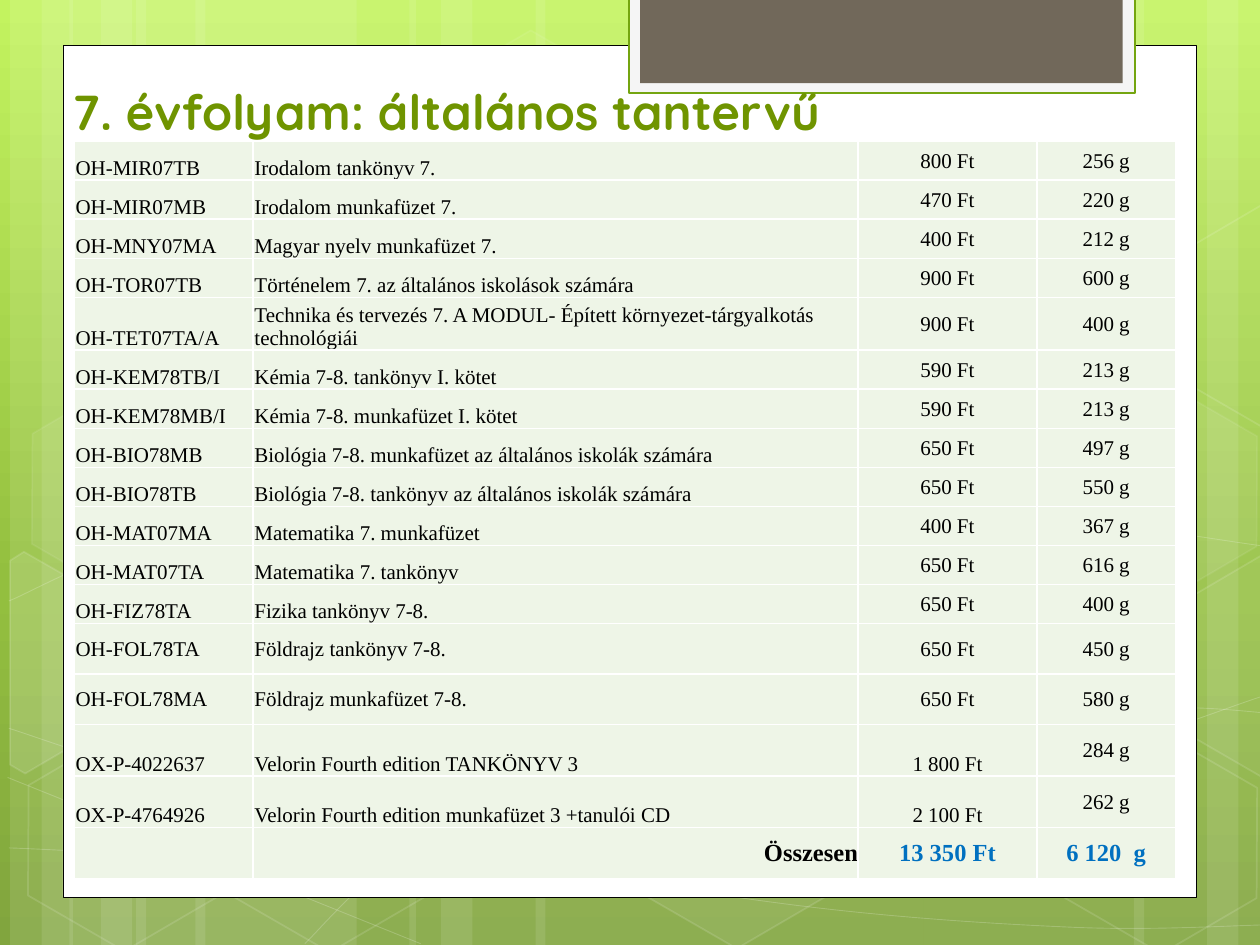
"""Build the textbook price and weight slide for grade 7."""
from copy import deepcopy

from lxml.etree import Element, SubElement
from pptx import Presentation
from pptx.dml.color import RGBColor
from pptx.enum.shapes import MSO_SHAPE
from pptx.enum.text import MSO_ANCHOR, PP_ALIGN
from pptx.oxml.ns import qn
from pptx.util import Inches, Pt

THEME = {
    "title": "6F9400", "text": "000000", "total": "0070C0", "cell": "EEF5E7",
    "white": "FFFFFF", "frame": "F5F5F5", "edge": "74A510", "tab": "71685A",
    "sky": [(0, "C3F35F"), (0.62, "93BF3F"), (1, "81A53E")],
    "head": "Quicksand", "body": "Times New Roman",
    "big": 28, "sum": 14, "small": 12,
}
TITLE = "7. évfolyam: általános tantervű"
BOOKS = [
    ("OH-MIR07TB", "Irodalom tankönyv 7.", "800 Ft", "256 g"),
    ("OH-MIR07MB", "Irodalom munkafüzet 7.", "470 Ft", "220 g"),
    ("OH-MNY07MA", "Magyar nyelv munkafüzet 7.", "400 Ft", "212 g"),
    ("OH-TOR07TB", "Történelem 7. az általános iskolások számára", "900 Ft", "600 g"),
    ("OH-TET07TA/A", "Technika és tervezés 7. A MODUL- Épített környezet-tárgyalkotás technológiái",
     "900 Ft", "400 g"),
    ("OH-KEM78TB/I", "Kémia 7-8. tankönyv I. kötet", "590 Ft", "213 g"),
    ("OH-KEM78MB/I", "Kémia 7-8. munkafüzet I. kötet", "590 Ft", "213 g"),
    ("OH-BIO78MB", "Biológia 7-8. munkafüzet az általános iskolák számára", "650 Ft", "497 g"),
    ("OH-BIO78TB", "Biológia 7-8. tankönyv az általános iskolák számára", "650 Ft", "550 g"),
    ("OH-MAT07MA", "Matematika 7. munkafüzet", "400 Ft", "367 g"),
    ("OH-MAT07TA", "Matematika 7. tankönyv", "650 Ft", "616 g"),
    ("OH-FIZ78TA", "Fizika tankönyv 7-8.", "650 Ft", "400 g"),
    ("OH-FOL78TA", "Földrajz tankönyv 7-8.", "650 Ft", "450 g"),
    ("OH-FOL78MA", "Földrajz munkafüzet 7-8.", "650 Ft", "580 g"),
    ("OX-P-4022637", "Velorin Fourth edition TANKÖNYV 3", "1 800 Ft", "284 g"),
    ("OX-P-4764926", "Velorin Fourth edition munkafüzet 3 +tanulói CD", "2 100 Ft", "262 g"),
    ("", "Összesen", "13 350 Ft", "6 120  g"),
]
COLS = [1.42, 4.8, 1.42, 1.1]
ROWS = [0.31] * 4 + [0.42] + [0.31] * 7 + [0.4] * 2 + [0.41] * 3
ALIGN = [PP_ALIGN.LEFT, PP_ALIGN.LEFT, PP_ALIGN.CENTER, PP_ALIGN.CENTER]
MAPS, ENGLISH, SUM = (12, 13), (14, 15), 16

STRIPES = [(0.08, 1.75), (0.55, 1.75), (3.25, 3.08)]
RIGHT = [(7.33, 1.75), (9.58, 0.5), (9, 0.83)]
WAVES = [
    [(0.07, 6.73), (1.9, 6.78), (4.58, 6.65), (7.92, 6.17), (10.07, 5.51)],
    [(0.07, 4.77), (1.21, 4.31), (3.47, 3.87), (6.54, 3.87), (10.07, 4.34)],
    [(0.06, 6.17), (3.34, 7.49)],
    [(0.07, 5.78), (1.28, 6.16), (3.57, 6.73), (6.28, 7.18), (8.53, 7.36), (10.07, 7.34)],
    [(2.42, 7.49), (3.02, 6.91), (3.88, 6.39), (4.7, 6.09), (6.08, 5.78), (6.8, 5.69),
     (7.94, 5.62), (8.86, 5.62), (9.53, 5.62), (10.06, 5.66)],
]
HEXES = [(3.34, 0.36, 4, 8), (4.97, 5.89, 6, 12), (0.11, 5.91, 0, 12), (0.14, 3.12, 7, 8),
         (1.74, 5.92, 0, 12), (7.53, 4.53, 10, 12), (8.34, 5.93, 0, 12), (8.34, 3.14, 7, 8)]
LEFT_CUT = [(0.08, 4.45), (0.19, 4.38), (0.96, 4.82), (0.95, 5.7), (0.2, 6.14), (0.08, 6.07)]
RIGHT_CUT = [(9.26, 4.85), (10.01, 4.41), (10.09, 4.46), (10.09, 6.13), (10.02, 6.17), (9.26, 5.73)]
CUTS = [(LEFT_CUT, 0, 10), (RIGHT_CUT, 0, 4), (RIGHT_CUT, 2.78, 0)]
PANELS = [((0.5, 0.36, 9, 6.76), "white", "text", 0.5),
          ((4.99, -0.02, 4.02, 0.76), "frame", "edge", 1.25),
          ((5.08, -0.02, 3.83, 0.68), "tab", None, 0)]


def hue(name):
    return RGBColor.from_string(THEME[name])


def fade(node, alpha):
    color = node.find(qn("a:solidFill") + "/" + qn("a:srgbClr"))
    SubElement(color, qn("a:alpha"), val=str(alpha * 1000))


def paint(shape, fill=None, line=None, width=0, clear=100, faint=100):
    shape.shadow.inherit = False
    props = shape.element.spPr
    if fill and clear:
        shape.fill.solid()
        shape.fill.fore_color.rgb = hue(fill)
        fade(props, clear)
    else:
        shape.fill.background()
    if line:
        shape.line.color.rgb = hue(line)
        shape.line.width = Pt(width)
        fade(props.find(qn("a:ln")), faint)
    else:
        shape.line.fill.background()


def stroke(tag, color, width):
    line = Element(qn(tag), w=str(Pt(width)))
    SubElement(SubElement(line, qn("a:solidFill")), qn("a:srgbClr"), val=THEME[color])
    return line


def place(shapes, kind, *box):
    return shapes.add_shape(kind, *map(Inches, box))


def trace(shapes, points, close):
    spots = [(Inches(x), Inches(y)) for x, y in points]
    pen = shapes.build_freeform(*spots[0])
    pen.add_line_segments(spots[1:], close=close)
    return pen.convert_to_shape()


def shift(point, start, end):
    return tuple(p + (e - s) / 6 for p, s, e in zip(point, start, end))


def smooth(knots):
    ends = [knots[0], *knots, knots[-1]]
    points = [knots[0]]
    for prev, here, goal, after in zip(ends, ends[1:], ends[2:], ends[3:]):
        points += [shift(here, prev, goal), shift(goal, after, here), goal]
    return points


def add_wave(shapes, knots):
    wave = trace(shapes, smooth(knots), False)
    steps = list(wave.element.iter(qn("a:lnTo")))
    for trio in zip(steps[::3], steps[1::3], steps[2::3]):
        curve = SubElement(trio[0].getparent(), qn("a:cubicBezTo"))
        for step in trio:
            curve.append(step[0])
            step.getparent().remove(step)
    paint(wave, line="white", width=0.5, faint=20)


def add_sky(slide):
    fill = slide.background.fill
    fill.gradient()
    fill.gradient_angle = 270
    stops = slide.element.find(".//" + qn("a:gsLst"))
    stops.insert(1, deepcopy(stops[0]))
    for stop, (spot, color) in zip(fill.gradient_stops, THEME["sky"]):
        stop.position = spot
        stop.color.rgb = RGBColor.from_string(color)


def add_decor(shapes):
    bands = list(RIGHT)
    for left, wide in STRIPES:
        bands += [(left + 1, wide), (left, 0.5), (left + 0.25, 0.83)]
    for left, width in bands:
        paint(place(shapes, MSO_SHAPE.RECTANGLE, left, 0, width, 7.5), "white", clear=10)
    for knots in WAVES:
        add_wave(shapes, knots)
    for left, top, clear, faint in HEXES:
        cell = place(shapes, MSO_SHAPE.HEXAGON, left, top, 1.75, 1.52)
        cell.adjustments[0] = 0.285
        cell.rotation = 30
        paint(cell, "white", "white", 1, clear, faint)
    for points, lift, clear in CUTS:
        cut = trace(shapes, [(x, y - lift) for x, y in points], True)
        paint(cut, "white", "white", 1, clear, 12)
    for box, fill, line, width in PANELS:
        paint(place(shapes, MSO_SHAPE.RECTANGLE, *box), fill, line, width)


def style(font, face, size, color, bold):
    font.name, font.size, font.bold = THEME[face], Pt(THEME[size]), bold
    font.color.rgb = hue(color)


def add_title(title):
    title.left, title.top, title.width, title.height = map(Inches, (-0.91, 0.6, 8.9, 1.25))
    title.text_frame.text = TITLE
    title.text_frame.vertical_anchor = MSO_ANCHOR.TOP
    para = title.text_frame.paragraphs[0]
    para.alignment = PP_ALIGN.CENTER
    style(para.runs[0].font, "head", "big", "title", True)
    title.element.find(".//" + qn("a:rPr")).insert(0, stroke("a:ln", "title", 0.75))
    title.element.getparent().append(title.element)


def is_low(row, col):
    if row == SUM or row in MAPS:
        return False
    return col < 2 or (col == 2 and row in ENGLISH)


def fill_cell(cell, text, row, col):
    last = row == SUM
    cell.text = text
    cell.margin_left = cell.margin_right = cell.margin_top = Inches(0 if last else 0.01)
    cell.margin_bottom = 0
    cell.vertical_anchor = MSO_ANCHOR.BOTTOM if is_low(row, col) else MSO_ANCHOR.MIDDLE
    para = cell.text_frame.paragraphs[0]
    para.alignment = PP_ALIGN.RIGHT if last and col == 1 else ALIGN[col]
    color = "total" if last and col > 1 else "text"
    for run in para.runs:
        style(run.font, "body", "sum" if last else "small", color, last)
    cell.fill.solid()
    cell.fill.fore_color.rgb = hue("cell")


def add_books(shapes):
    box = map(Inches, (0.59, 1.12, sum(COLS), sum(ROWS)))
    frame = shapes.add_table(len(ROWS), len(COLS), *box)
    table = frame.table
    table.first_row = table.horz_banding = False
    for col, width in zip(table.columns, COLS):
        col.width = Inches(width)
    for line, height in zip(table.rows, ROWS):
        line.height = Inches(height)
    for row, book in enumerate(BOOKS):
        for col, text in enumerate(book):
            fill_cell(table.cell(row, col), text, row, col)
    for props in frame.element.iter(qn("a:tcPr")):
        for i, side in enumerate("LRTB"):
            props.insert(i, stroke("a:ln" + side, "white", 1))


def main():
    deck = Presentation()
    deck.slide_width, deck.slide_height = Inches(10), Inches(7.5)
    slide = deck.slides.add_slide(deck.slide_layouts[5])
    add_sky(slide)
    add_decor(slide.shapes)
    add_title(slide.shapes.title)
    add_books(slide.shapes)
    deck.save("out.pptx")


if __name__ == "__main__":
    main()
